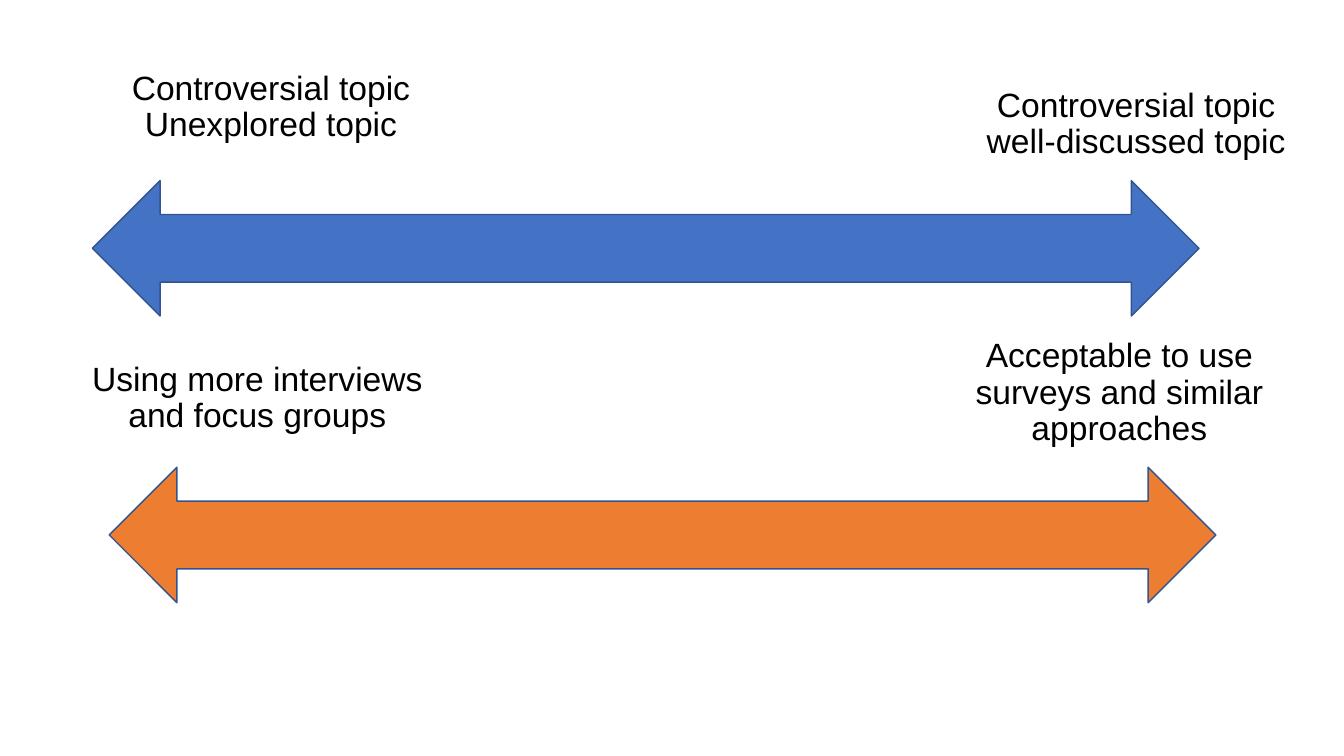
from pptx import Presentation
from pptx.dml.color import RGBColor
from pptx.enum.shapes import MSO_SHAPE
from pptx.enum.text import MSO_ANCHOR, PP_ALIGN
from pptx.util import Emu, Pt

PX = 9525  # EMU per px, 96 px to the inch
BLUE = RGBColor(0x44, 0x72, 0xC4)
ORANGE = RGBColor(0xED, 0x7D, 0x31)
OUTLINE = RGBColor(0x32, 0x54, 0x91)
BLACK = RGBColor(0x00, 0x00, 0x00)

LABEL_SIZE = (356, 139)
ARROW_SIZE = (1054, 129)


def px(*lengths):
    return [Emu(n * PX) for n in lengths]


def add_arrow(s, left, top, color):
    sp = s.shapes.add_shape(MSO_SHAPE.LEFT_RIGHT_ARROW, *px(left, top, *ARROW_SIZE))
    sp.shadow.inherit = False
    sp.fill.solid()
    sp.fill.fore_color.rgb = color
    sp.line.color.rgb = OUTLINE
    sp.line.width = Pt(1)


def add_label(s, left, top, *lines):
    """Add a centred label, with a line break between the given lines."""
    tf = s.shapes.add_textbox(*px(left, top, *LABEL_SIZE)).text_frame
    tf.word_wrap = True
    tf.vertical_anchor = MSO_ANCHOR.MIDDLE
    p = tf.paragraphs[0]
    p.alignment = PP_ALIGN.CENTER
    p.line_spacing = 0.9
    for i, line in enumerate(lines):
        if i:
            p.add_line_break()
        r = p.add_run()
        r.text = line
        r.font.name = "Arial"
        r.font.size = Pt(24)
        r.font.color.rgb = BLACK


def main():
    prs = Presentation()
    prs.slide_width, prs.slide_height = px(1280, 720)
    s = prs.slides.add_slide(prs.slide_layouts[6])

    add_label(s, 80, 33, "Controversial topic", "Unexplored topic")
    add_arrow(s, 88, 172, BLUE)
    add_arrow(s, 104, 445, ORANGE)
    add_label(s, 888, 305, "Acceptable to use surveys and similar approaches")
    add_label(s, 904, 49, "Controversial topic", "well-discussed topic")
    add_label(s, 67, 310, "Using more interviews and focus groups")

    prs.save("out.pptx")


if __name__ == "__main__":
    main()
